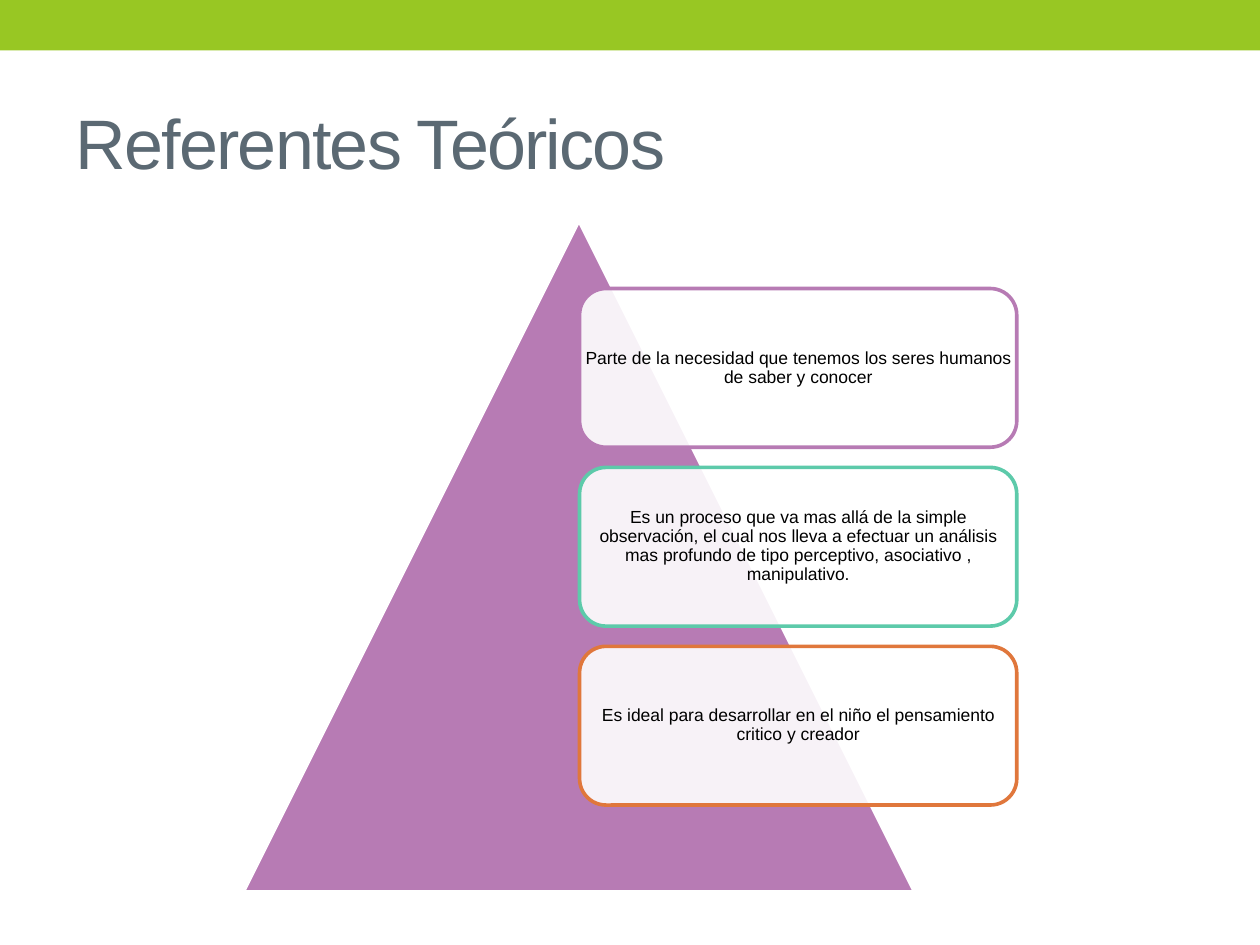
from dataclasses import dataclass

from lxml.etree import SubElement
from pptx import Presentation
from pptx.dml.color import RGBColor as RGB
from pptx.enum.shapes import MSO_SHAPE as SHAPE
from pptx.enum.text import MSO_ANCHOR as ANCHOR, PP_ALIGN as ALIGN
from pptx.oxml.ns import qn
from pptx.util import Inches, Pt


@dataclass(frozen=True)
class Theme:
    """Colours, font and type sizes of the slide."""
    font: str = "Arial"
    title_size: float = 40
    body_size: float = 10
    line_width: float = 2.08
    band: str = "98C723"
    title: str = "5B6973"
    text: str = "000000"
    paper: str = "FFFFFF"
    accents: tuple = ("B77BB4", "5DCAAA", "E0773C")


class Deck:
    """Draws themed elements on the current slide."""

    def __init__(self, prs, theme):
        self.theme = theme
        self.slide = prs.slides.add_slide(prs.slide_layouts[5])

    def shape(self, kind, box, fill, line=None, alpha=None):
        """Add a filled preset shape with an optional outline and opacity."""
        sp = self.slide.shapes.add_shape(kind, *map(Inches, box))
        sp.shadow.inherit = False
        sp.fill.solid()
        sp.fill.fore_color.rgb = RGB.from_string(fill)
        if alpha:
            color = sp._element.spPr.find(qn("a:solidFill"))[0]
            SubElement(color, qn("a:alpha")).set("val", str(alpha * 1000))
        if line:
            sp.line.color.rgb = RGB.from_string(line)
            sp.line.width = Pt(self.theme.line_width)
        else:
            sp.line.fill.background()
        return sp

    def add_text(self, tf, text, size, color, align):
        """Fill a text frame with one styled run, centred vertically."""
        tf.word_wrap = True
        tf.vertical_anchor = ANCHOR.MIDDLE
        p = tf.paragraphs[0]
        p.alignment = align
        r = p.add_run()
        r.text = text
        r.font.name = self.theme.font
        r.font.size = Pt(size)
        r.font.color.rgb = RGB.from_string(color)
        return p, r

    def title(self, text, box):
        """Move and format the title placeholder."""
        sp = self.slide.shapes.title
        sp.left, sp.top, sp.width, sp.height = map(Inches, box)
        p, r = self.add_text(sp.text_frame, text, self.theme.title_size,
                             self.theme.title, ALIGN.LEFT)
        r._r.get_or_add_rPr().set("spc", "-100")

    def card(self, text, box, accent):
        """Add a translucent rounded card with its centred text."""
        self.shape(SHAPE.ROUNDED_RECTANGLE, box, self.theme.paper, accent, 90)
        tf = self.slide.shapes.add_textbox(*map(Inches, box)).text_frame
        tf.margin_left = tf.margin_right = Inches(0.03)
        tf.margin_top = tf.margin_bottom = Inches(0.04)
        p, r = self.add_text(tf, text, self.theme.body_size, self.theme.text,
                             ALIGN.CENTER)
        p.line_spacing = 0.9


STATEMENTS = (
    "Parte de la necesidad que tenemos los seres humanos de saber y conocer",
    "Es un proceso que va mas allá de la simple observación, el cual nos lleva "
    "a efectuar un análisis mas profundo de tipo perceptivo, asociativo , "
    "manipulativo.",
    "Es ideal para desarrollar en el niño el pensamiento critico y creador",
)
CARD_LEFT, CARD_TOP, CARD_WIDTH, CARD_HEIGHT = 4.6, 2.29, 3.47, 1.26
CARD_PITCH = 1.42


def main():
    """Build the slide and save it."""
    prs = Presentation()
    prs.slide_width, prs.slide_height = Inches(10), Inches(7.5)
    theme = Theme()
    deck = Deck(prs, theme)
    deck.shape(SHAPE.RECTANGLE, (0, 0, 10, 0.4), theme.band)
    deck.title("Referentes Teóricos", (0.5, 0.58, 9, 1.08))
    deck.shape(SHAPE.ISOSCELES_TRIANGLE, (1.93, 1.75, 5.33, 5.33),
               theme.accents[0], theme.paper)
    for row, (text, accent) in enumerate(zip(STATEMENTS, theme.accents)):
        top = CARD_TOP + row * CARD_PITCH
        deck.card(text, (CARD_LEFT, top, CARD_WIDTH, CARD_HEIGHT), accent)
    prs.save("out.pptx")


main()
